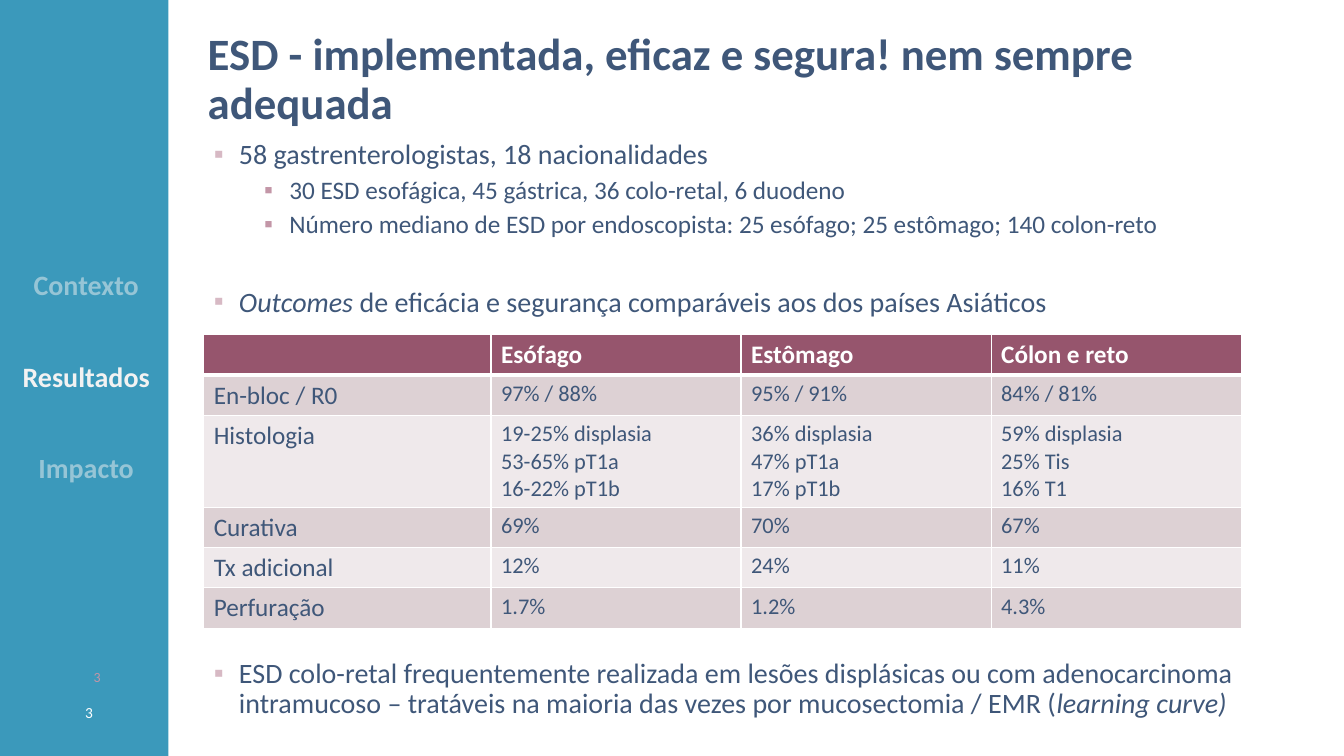
"""Builds the slide on ESD results: section sidebar, heading, bullets and outcome table."""
from dataclasses import dataclass

import pptx
import pptx.dml.color
import pptx.enum.shapes
import pptx.enum.text
import pptx.oxml.ns
import pptx.util
from lxml import etree

Inches = pptx.util.Inches
Pt = pptx.util.Pt
Align = pptx.enum.text.PP_ALIGN
Anchor = pptx.enum.text.MSO_ANCHOR


@dataclass(frozen=True)
class Theme:
    font: str = "Calibri"
    ink: str = "3F5779"
    white: str = "FFFFFF"
    teal: str = "3B99BB"
    section: str = "F2F2F2"
    bullets: tuple = ("D7B9C4", "C396A7")
    header: str = "96556D"
    bands: tuple = ("DDD1D4", "EFE9EB")
    heading_size: int = 32
    body_sizes: tuple = (20, 18)
    label_size: int = 18
    value_size: int = 16


theme = Theme()


def add_span(para, text, size, color, bold=False, italic=False):
    span = para.add_run()
    span.text = text
    span.font.name = theme.font
    span.font.size = Pt(size)
    span.font.bold = bold
    span.font.italic = italic
    span.font.color.rgb = pptx.dml.color.RGBColor.from_string(color)
    return span


def add_node(parent, tag, **attributes):
    return etree.SubElement(parent, pptx.oxml.ns.qn(tag), **attributes)


deck = pptx.Presentation()
deck.slide_width = Inches(13.33)
deck.slide_height = Inches(7.5)
page = deck.slides.add_slide(deck.slide_layouts[3])
heading, upper_list, lower_list = page.placeholders

sidebar = page.shapes.add_shape(
    pptx.enum.shapes.MSO_SHAPE.RECTANGLE, 0, 0, Inches(1.67), deck.slide_height
)
sidebar.shadow.inherit = False
sidebar.fill.solid()
sidebar.fill.fore_color.rgb = pptx.dml.color.RGBColor.from_string(theme.teal)
sidebar.line.fill.background()
frame = sidebar.text_frame
frame.word_wrap = True
frame.vertical_anchor = Anchor.MIDDLE
frame.margin_left = Inches(0.04)
frame.margin_top = frame.margin_right = frame.margin_bottom = 0
for index, section in enumerate(["Contexto", "Resultados", "Impacto"]):
    para = frame.add_paragraph() if index else frame.paragraphs[0]
    para.alignment = Align.CENTER
    para.line_spacing = 0.9
    para.space_before = Pt(44 if index else 0)
    span = add_span(para, section, 20, theme.section, bold=True)
    if section != "Resultados":
        color_node = span.font.fill._xPr.find(".//" + pptx.oxml.ns.qn("a:srgbClr"))
        add_node(color_node, "a:alpha", val="50000")

for left, top, width, height, size, color, anchor in [
    (0.7, 6.63, 0.43, 0.26, 10, theme.bullets[1], Anchor.TOP),
    (0.58, 6.85, 0.51, 0.43, 11, theme.white, Anchor.MIDDLE),
]:
    box = page.shapes.add_textbox(Inches(left), Inches(top), Inches(width), Inches(height))
    frame = box.text_frame
    frame.word_wrap = True
    frame.vertical_anchor = anchor
    frame.margin_left = Inches(0.1)
    frame.margin_top = frame.margin_right = frame.margin_bottom = 0
    para = frame.paragraphs[0]
    para.alignment = Align.CENTER
    add_span(para, "3", size, color)

heading.left, heading.top = Inches(2.02), Inches(0.27)
heading.width, heading.height = Inches(11.16), Inches(1.06)
frame = heading.text_frame
frame.auto_size = pptx.enum.text.MSO_AUTO_SIZE.NONE
frame.vertical_anchor = Anchor.MIDDLE
frame.margin_left = Inches(0.04)
frame.margin_top = frame.margin_right = frame.margin_bottom = 0
para = frame.paragraphs[0]
para.alignment = Align.LEFT
para.line_spacing = 0.9
add_span(para, "ESD - implementada, eficaz e segura! nem sempre adequada",
         theme.heading_size, theme.ink, bold=True)

upper_items = [
    (0, 10, [("58 gastrenterologistas, 18 nacionalidades", False)]),
    (1, 5, [("30 ESD esofágica, 45 gástrica, 36 colo-retal, 6 duodeno", False)]),
    (1, 5, [("Número mediano de ESD por endoscopista: 25 esófago; 25 estômago; "
             "140 colon-reto", False)]),
    (0, 35, [("Outcomes ", True),
             ("de eficácia e segurança comparáveis aos dos países Asiáticos", False)]),
]
lower_items = [
    (0, 10, [("ESD colo-retal frequentemente realizada em lesões displásicas ou com "
              "adenocarcinoma intramucoso – tratáveis na maioria das vezes por "
              "mucosectomia / EMR (", False), ("learning curve)", True)]),
]
for body, top, height, items in [
    (upper_list, 1.34, 1.95, upper_items),
    (lower_list, 6.49, 0.9, lower_items),
]:
    body.left, body.top = Inches(2.02), Inches(top)
    body.width, body.height = Inches(10.81), Inches(height)
    frame = body.text_frame
    frame.auto_size = pptx.enum.text.MSO_AUTO_SIZE.NONE
    for index, (level, gap, spans) in enumerate(items):
        para = frame.add_paragraph() if index else frame.paragraphs[0]
        para.level = level
        para.line_spacing = 0.9
        para.space_before = Pt(gap)
        properties = para._p.get_or_add_pPr()
        properties.set("marL", str(Inches(0.25 + 0.5 * level)))
        properties.set("indent", str(Inches(-0.25)))
        bullet_color = add_node(properties, "a:buClr")
        add_node(bullet_color, "a:srgbClr", val=theme.bullets[level])
        add_node(properties, "a:buChar", char="▪")
        for text, italic in spans:
            add_span(para, text, theme.body_sizes[level], theme.ink, italic=italic)

outcomes = [
    ["", "Esófago", "Estômago", "Cólon e reto"],
    ["En-bloc / R0", "97% / 88%", "95% / 91%", "84% / 81%"],
    ["Histologia", "19-25% displasia\n53-65% pT1a\n16-22% pT1b",
     "36% displasia\n47% pT1a\n17% pT1b", "59% displasia\n25% Tis\n16% T1"],
    ["Curativa", "69%", "70%", "67%"],
    ["Tx adicional", "12%", "24%", "11%"],
    ["Perfuração", "1.7%", "1.2%", "4.3%"],
]
table = page.shapes.add_table(
    len(outcomes), 4, Inches(2.02), Inches(3.32), Inches(10.29), Inches(2.91)
).table
for column, width in zip(table.columns, [2.85, 2.48, 2.48, 2.48]):
    column.width = Inches(width)
for row_index, row in enumerate(outcomes):
    is_header = row_index == 0
    table.rows[row_index].height = Inches(0.91 if row[0] == "Histologia" else 0.4)
    for column_index, text in enumerate(row):
        cell = table.cell(row_index, column_index)
        properties = cell._tc.get_or_add_tcPr()
        for side in ["L", "R", "T", "B"]:
            thick = (is_header and side == "B") or (row_index == 1 and side == "T")
            border = add_node(properties, "a:ln" + side, w=str(Pt(3 if thick else 1)))
            border_fill = add_node(border, "a:solidFill")
            add_node(border_fill, "a:srgbClr", val=theme.white)
        cell.fill.solid()
        cell.fill.fore_color.rgb = pptx.dml.color.RGBColor.from_string(
            theme.header if is_header else theme.bands[(row_index - 1) % 2]
        )
        size = theme.label_size if is_header or column_index == 0 else theme.value_size
        color = theme.white if is_header else theme.ink
        for line_index, line in enumerate(text.splitlines()):
            frame = cell.text_frame
            para = frame.add_paragraph() if line_index else frame.paragraphs[0]
            add_span(para, line, size, color, bold=is_header)

deck.save("out.pptx")
